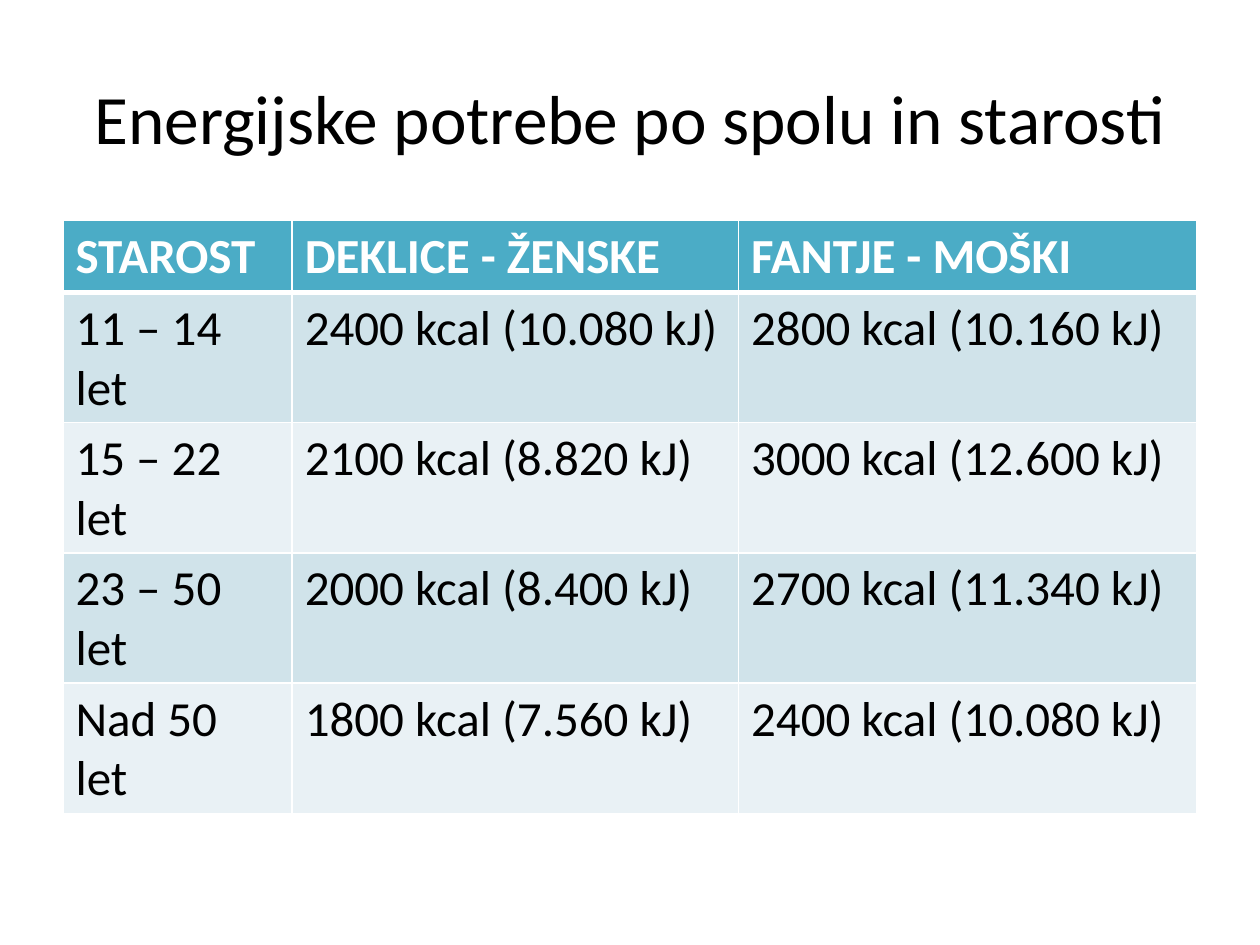
from dataclasses import dataclass

from lxml import etree
from pptx import Presentation
from pptx.dml.color import RGBColor
from pptx.enum.text import MSO_ANCHOR, PP_ALIGN
from pptx.oxml.ns import qn
from pptx.util import Cm, Pt

MIDDLE = MSO_ANCHOR.MIDDLE
CENTER = PP_ALIGN.CENTER


@dataclass(frozen=True)
class Theme:
    font: str = "Calibri"
    title: float = 39.6
    body: float = 28
    black: str = "000000"
    white: str = "FFFFFF"
    head: str = "4BACC6"
    bands: tuple = ("E9F1F5", "D0E3EA")


theme = Theme()


def add_run(para, text, size, color, bold=False):
    run = para.add_run()
    run.text = text
    run.font.name = theme.font
    run.font.size = Pt(size)
    run.font.bold = bold
    run.font.color.rgb = RGBColor.from_string(color)


def add_border(cell, side, width):
    props = cell._tc.get_or_add_tcPr()
    line = etree.SubElement(props, qn("a:ln" + side), w=str(Pt(width)))
    fill = etree.SubElement(line, qn("a:solidFill"))
    etree.SubElement(fill, qn("a:srgbClr"), val=theme.white)


# Slide
deck = Presentation()
deck.slide_width, deck.slide_height = Cm(25.4), Cm(19.05)
slide = deck.slides.add_slide(deck.slide_layouts[6])

# Title
box = slide.shapes.add_textbox(Cm(1.27), Cm(0.76), Cm(22.86), Cm(3.18))
frame = box.text_frame
frame.word_wrap = True
frame.vertical_anchor = MIDDLE
para = frame.paragraphs[0]
para.alignment = CENTER
add_run(para, "Energijske potrebe po spolu in starosti", theme.title, theme.black)

# Energy needs by age and sex
needs = [
    ("STAROST", "DEKLICE - ŽENSKE", "FANTJE - MOŠKI"),
    ("11 – 14 let", "2400 kcal (10.080 kJ)", "2800 kcal (10.160 kJ)"),
    ("15 – 22 let", "2100 kcal (8.820 kJ)", "3000 kcal (12.600 kJ)"),
    ("23 – 50 let", "2000 kcal (8.400 kJ)", "2700 kcal (11.340 kJ)"),
    ("Nad 50 let", "1800 kcal (7.560 kJ)", "2400 kcal (10.080 kJ)"),
]
widths = [4.62, 9, 9.23]
height = 1.03
table = slide.shapes.add_table(
    len(needs), len(widths), Cm(1.27), Cm(4.45),
    Cm(sum(widths)), Cm(height * len(needs))).table
for col, width in zip(table.columns, widths):
    col.width = Cm(width)

for i, texts in enumerate(needs):
    table.rows[i].height = Cm(height)
    head = i == 0
    for j, text in enumerate(texts):
        cell = table.cell(i, j)
        # A thicker rule parts the header from the body
        for side in "LRTB":
            thick = (head and side == "B") or (i == 1 and side == "T")
            add_border(cell, side, 3 if thick else 1)
        cell.fill.solid()
        shade = theme.head if head else theme.bands[i % 2]
        cell.fill.fore_color.rgb = RGBColor.from_string(shade)
        color = theme.white if head else theme.black
        add_run(cell.text_frame.paragraphs[0], text, theme.body, color, head)

deck.save("out.pptx")
